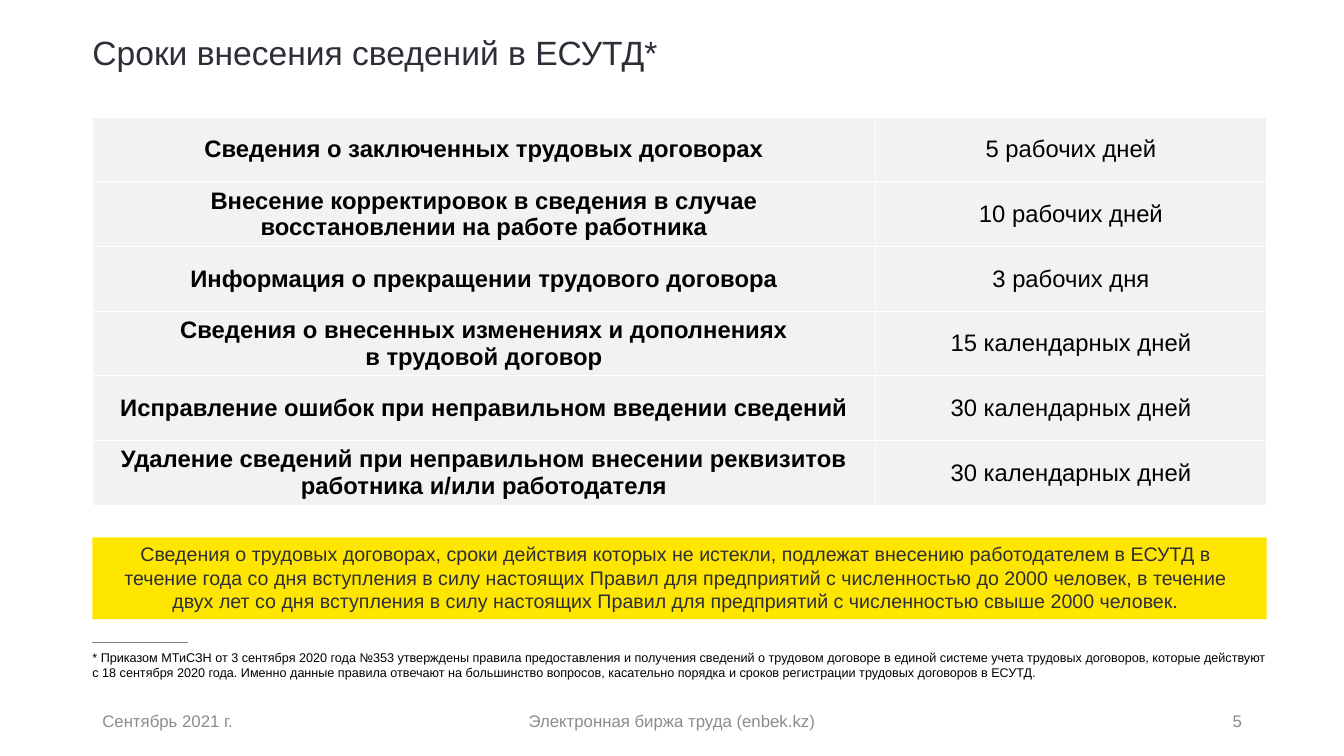
from dataclasses import dataclass, field
from typing import Any

import pptx
import pptx.dml.color
import pptx.enum.shapes
import pptx.enum.text
import pptx.oxml
import pptx.oxml.ns
import pptx.util
from lxml import etree

Cm = pptx.util.Cm
Pt = pptx.util.Pt
RGBColor = pptx.dml.color.RGBColor
Align = pptx.enum.text.PP_ALIGN
Anchor = pptx.enum.text.MSO_ANCHOR

BLACK = RGBColor(0x00, 0x00, 0x00)
WHITE = RGBColor(0xFF, 0xFF, 0xFF)
INK = RGBColor(0x2E, 0x2E, 0x38)
FOOTER_GRAY = RGBColor(0x8C, 0x8C, 0x8C)
RULE_GRAY = RGBColor(0x80, 0x80, 0x80)
CELL_GRAY = RGBColor(0xF2, 0xF2, 0xF2)
YELLOW = RGBColor(0xFF, 0xE6, 0x00)

FONT = "Arial"
LEFT = 2.33
CONTENT_WIDTH = 29.59
TABLE_TOP = 2.95
ROW_HEIGHT = 1.63
COLUMN_WIDTHS = (19.73, 9.86)
FOOTER_TOP = 17.65
FOOTER_HEIGHT = 1.02
RULE_TOP = 16.18

NO_MARGINS = {f"margin_{side}": 0 for side in ("left", "right", "top", "bottom")}


@dataclass(frozen=True)
class Label:
    """A text block; left, top, width and height are in centimetres."""
    text: str
    left: float
    top: float
    width: float
    height: float
    size: float
    color: RGBColor
    frame_format: dict[str, Any] = field(default_factory=dict)
    paragraph_format: dict[str, Any] = field(default_factory=dict)


@dataclass(frozen=True)
class Deadline:
    subject: tuple[str, ...]
    term: str


DEADLINES = (
    Deadline(("Сведения о заключенных трудовых договорах",), "5 рабочих дней"),
    Deadline(("Внесение корректировок в сведения в случае",
              "восстановлении на работе работника"), "10 рабочих дней"),
    Deadline(("Информация о прекращении трудового договора",), "3 рабочих дня"),
    Deadline(("Сведения о внесенных изменениях и дополнениях",
              "в трудовой договор"), "15 календарных дней"),
    Deadline(("Исправление ошибок при неправильном введении сведений",),
             "30 календарных дней"),
    Deadline(("Удаление сведений при неправильном внесении реквизитов "
              "работника и/или работодателя",), "30 календарных дней"),
)

TITLE = Label("Сроки внесения сведений в ЕСУТД*", LEFT, 0.97, 30.5, 1.65, 24, INK,
              NO_MARGINS, {"line_spacing": 0.85})

NOTICE = Label(
    "Сведения о трудовых договорах, сроки действия которых не истекли, подлежат "
    "внесению работодателем в ЕСУТД в течение года со дня вступления в силу "
    "настоящих Правил для предприятий с численностью до 2000 человек, в течение "
    "двух лет со дня вступления в силу настоящих Правил для предприятий с "
    "численностью свыше 2000 человек.",
    LEFT, 13.54, CONTENT_WIDTH, 2.06, 14, INK,
    {"vertical_anchor": Anchor.TOP, "margin_right": Cm(0.43)},
    {"alignment": Align.CENTER})

FOOTNOTE = Label(
    "* Приказом МТиСЗН от 3 сентября 2020 года №353 утверждены правила "
    "предоставления и получения сведений о трудовом договоре в единой системе "
    "учета трудовых договоров, которые действуют с 18 сентября 2020 года. Именно "
    "данные правила отвечают на большинство вопросов, касательно порядка и сроков "
    "регистрации трудовых договоров в ЕСУТД.",
    LEFT, 16.38, CONTENT_WIDTH, 1.09, 9, BLACK, NO_MARGINS, {"space_after": Pt(2)})

FOOTERS = tuple(
    Label(text, left, FOOTER_TOP, width, FOOTER_HEIGHT, 12, FOOTER_GRAY,
          {"vertical_anchor": Anchor.MIDDLE}, {"alignment": alignment})
    for text, left, width, alignment in (
        ("Сентябрь 2021 г.", LEFT, 7.62, Align.LEFT),
        ("Электронная биржа труда (enbek.kz)", 11.22, 11.43, Align.CENTER),
        ("5", 23.93, 7.62, Align.RIGHT),
    )
)


def apply_format(target: Any, values: dict[str, Any]) -> None:
    for name, value in values.items():
        setattr(target, name, value)


def write_paragraph(para: Any, text: str, size: float, color: RGBColor,
                    paragraph_format: dict[str, Any], bold: bool = False) -> None:
    apply_format(para, paragraph_format)
    span = para.add_run()
    span.text = text
    apply_format(span.font, {"name": FONT, "size": Pt(size), "bold": bold})
    span.font.color.rgb = color


def fill_label(shape: Any, label: Label) -> None:
    frame = shape.text_frame
    apply_format(frame, {"word_wrap": True, **label.frame_format})
    write_paragraph(frame.paragraphs[0], label.text, label.size, label.color,
                    label.paragraph_format)


def label_bounds(label: Label) -> tuple[int, int, int, int]:
    return Cm(label.left), Cm(label.top), Cm(label.width), Cm(label.height)


def add_label(page: Any, label: Label) -> None:
    fill_label(page.shapes.add_textbox(*label_bounds(label)), label)


def add_notice(page: Any, label: Label) -> None:
    banner = page.shapes.add_shape(
        pptx.enum.shapes.MSO_SHAPE.RECTANGLE, *label_bounds(label))
    banner.shadow.inherit = False
    banner.fill.solid()
    banner.fill.fore_color.rgb = YELLOW
    banner.line.fill.background()
    fill_label(banner, label)


def add_cell_borders(cell: Any) -> None:
    properties = cell._tc.get_or_add_tcPr()
    for side in ("L", "R", "T", "B"):
        properties.append(pptx.oxml.parse_xml(
            f'<a:ln{side} {pptx.oxml.ns.nsdecls("a")} w="{Pt(1)}"><a:solidFill>'
            f'<a:srgbClr val="{WHITE}"/></a:solidFill></a:ln{side}>'))


def fill_cell(cell: Any, lines: tuple[str, ...], bold: bool) -> None:
    add_cell_borders(cell)
    cell.fill.solid()
    cell.fill.fore_color.rgb = CELL_GRAY
    apply_format(cell, {**NO_MARGINS, "vertical_anchor": Anchor.MIDDLE})
    space_after = Pt(6 if len(lines) == 1 else 0)
    frame = cell.text_frame
    for index, line in enumerate(lines):
        para = frame.add_paragraph() if index else frame.paragraphs[0]
        write_paragraph(para, line, 17, BLACK,
                        {"alignment": Align.CENTER, "space_after": space_after}, bold)


def add_deadline_table(page: Any) -> None:
    table = page.shapes.add_table(
        len(DEADLINES), len(COLUMN_WIDTHS), Cm(LEFT), Cm(TABLE_TOP),
        Cm(CONTENT_WIDTH), Cm(ROW_HEIGHT * len(DEADLINES))).table
    apply_format(table, {"first_row": False, "horz_banding": False})
    for column, width in zip(table.columns, COLUMN_WIDTHS):
        column.width = Cm(width)
    for row, deadline in zip(table.rows, DEADLINES):
        row.height = Cm(ROW_HEIGHT)
        fill_cell(row.cells[0], deadline.subject, bold=True)
        fill_cell(row.cells[1], (deadline.term,), bold=False)


def add_footnote_rule(page: Any) -> None:
    rule = page.shapes.add_connector(
        pptx.enum.shapes.MSO_CONNECTOR.STRAIGHT,
        Cm(LEFT), Cm(RULE_TOP), Cm(LEFT + 2.42), Cm(RULE_TOP))
    rule.line.color.rgb = RULE_GRAY
    rule.line.width = Pt(0.5)
    etree.SubElement(rule._element.spPr, pptx.oxml.ns.qn("a:effectLst"))


def main() -> None:
    deck = pptx.Presentation()
    apply_format(deck, {"slide_width": Cm(33.87), "slide_height": Cm(19.05)})
    page = deck.slides.add_slide(deck.slide_layouts[6])
    for label in (*FOOTERS, TITLE):
        add_label(page, label)
    add_deadline_table(page)
    add_footnote_rule(page)
    add_notice(page, NOTICE)
    add_label(page, FOOTNOTE)
    deck.save("out.pptx")


if __name__ == "__main__":
    main()
